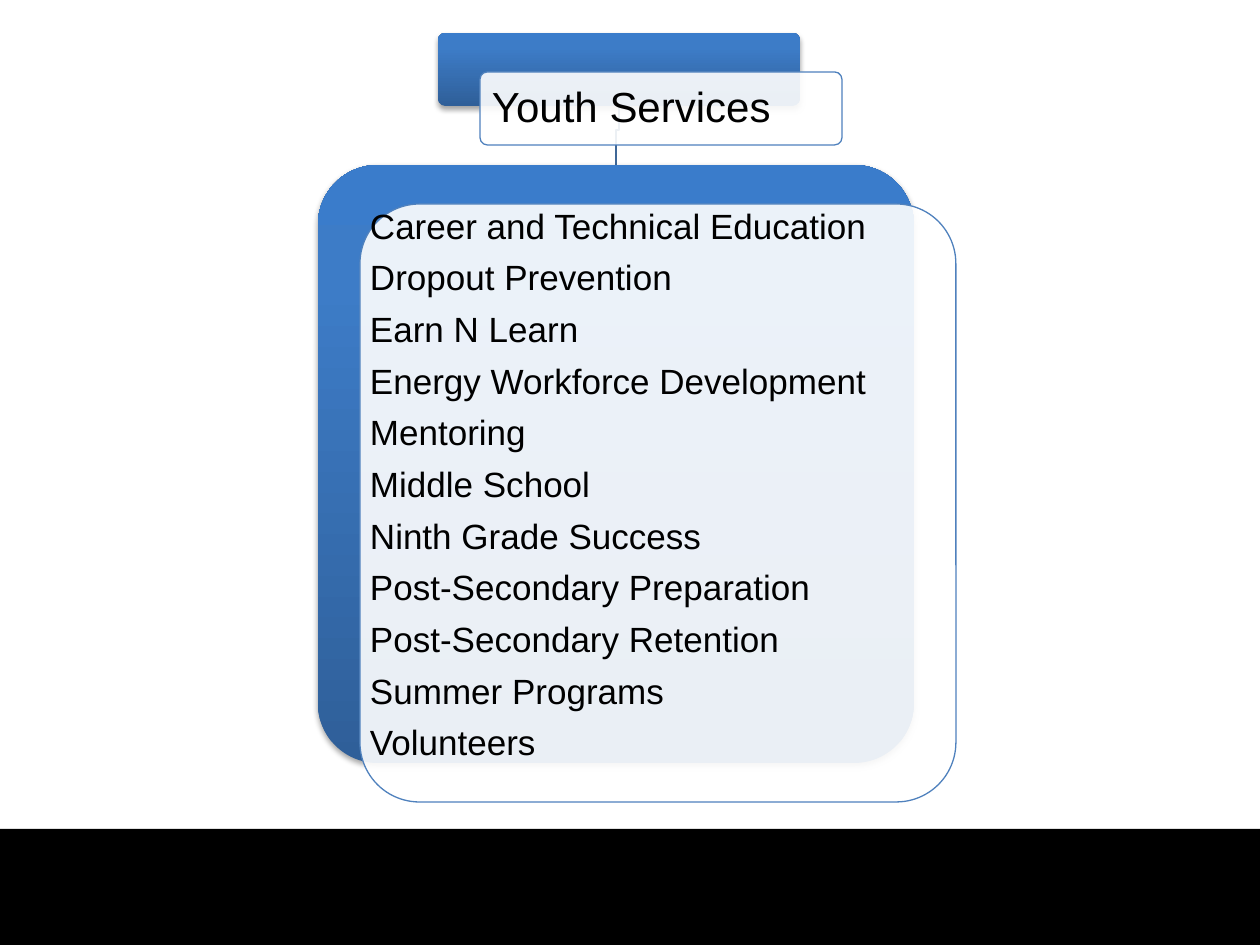
from copy import deepcopy
from dataclasses import dataclass

from pptx import Presentation
from pptx.dml.color import RGBColor
from pptx.enum.shapes import MSO_SHAPE
from pptx.enum.text import MSO_ANCHOR
from pptx.oxml import parse_xml
from pptx.oxml.ns import nsdecls, qn
from pptx.shapes.autoshape import Shape
from pptx.slide import Slide
from pptx.util import Emu, Pt

PX = 914400 // 126
OFFSET_X, OFFSET_Y = 42, 39
COLORS = {
    "paper": "FFFFFF",
    "ink": "000000",
    "border": "4F81BD",
    "link": "3F6797",
    "deep": "2F5F99",
    "mid": "3D7CC7",
    "bright": "3A7CCB",
}
GRADIENT = [(0, "deep"), (0.8, "mid"), (1, "bright")]
PROGRAMS = [
    "Career and Technical Education",
    "Dropout Prevention",
    "Earn N Learn",
    "Energy Workforce Development",
    "Mentoring",
    "Middle School",
    "Ninth Grade Success",
    "Post-Secondary Preparation",
    "Post-Secondary Retention",
    "Summer Programs",
    "Volunteers",
]


@dataclass(frozen=True)
class Card:
    left: int
    top: int
    width: int
    height: int
    lines: list[str]
    size: int
    anchor: MSO_ANCHOR
    inset_x: int
    inset_y: int


CARDS = [
    Card(438, 33, 362, 73, ["Youth Services"], 24, MSO_ANCHOR.MIDDLE, 12, 12),
    Card(318, 165, 596, 598, PROGRAMS, 20, MSO_ANCHOR.TOP, 10, 5),
]


def px(length: int) -> Emu:
    return Emu(length * PX)


def color(key: str) -> RGBColor:
    return RGBColor.from_string(COLORS[key])


def add_block(slide: Slide, kind: MSO_SHAPE, *box: int) -> Shape:
    block = slide.shapes.add_shape(kind, *map(px, box))
    block.shadow.inherit = False
    block.line.fill.background()
    return block


def add_gradient(block: Shape) -> None:
    block.fill.gradient()
    block.fill.gradient_angle = 90
    stop_list = block.fill._xPr.find(qn("a:gradFill")).find(qn("a:gsLst"))
    stop_list.append(deepcopy(stop_list[-1]))
    for stop, (position, key) in zip(block.fill.gradient_stops, GRADIENT):
        stop.position = position
        stop.color.rgb = color(key)


def add_shadow(block: Shape) -> None:
    effects = block._element.spPr.find(qn("a:effectLst"))
    effects.append(parse_xml(
        f'<a:outerShdw {nsdecls("a")} blurRad="{Pt(3.1)}" dist="{Pt(1.8)}" '
        f'dir="5400000" rotWithShape="0"><a:srgbClr val="{COLORS["ink"]}">'
        '<a:alpha val="35000"/></a:srgbClr></a:outerShdw>'
    ))


def add_text(slide: Slide, card: Card, *box: int) -> None:
    frame = slide.shapes.add_textbox(*map(px, box)).text_frame
    frame.word_wrap = True
    frame.vertical_anchor = card.anchor
    frame.margin_left = frame.margin_right = px(card.inset_x)
    frame.margin_top = frame.margin_bottom = px(card.inset_y)
    for index, line in enumerate(card.lines):
        paragraph = frame.add_paragraph() if index else frame.paragraphs[0]
        paragraph.line_spacing = 0.9
        if line != card.lines[-1]:
            paragraph.space_after = Pt(7.9)
        run = paragraph.add_run()
        run.text = line
        run.font.name = "Arial"
        run.font.size = Pt(card.size)
        run.font.color.rgb = color("ink")


def add_card(slide: Slide, card: Card) -> None:
    size = (card.width, card.height)
    back = add_block(slide, MSO_SHAPE.ROUNDED_RECTANGLE, card.left, card.top, *size)
    back.adjustments[0] = 0.1
    add_gradient(back)
    add_shadow(back)

    front_box = (card.left + OFFSET_X, card.top + OFFSET_Y, *size)
    front = add_block(slide, MSO_SHAPE.ROUNDED_RECTANGLE, *front_box)
    front.adjustments[0] = 0.1
    front.fill.solid()
    front.fill.fore_color.rgb = color("paper")
    tint = front._element.spPr.find(qn("a:solidFill"))[0]
    tint.append(parse_xml(f'<a:alpha {nsdecls("a")} val="90000"/>'))
    front.line.color.rgb = color("border")
    front.line.width = Pt(0.75)
    add_text(slide, card, *front_box)


def add_link(slide: Slide, parent: Card, child: Card) -> None:
    start_x = parent.left + parent.width // 2
    start_y = parent.top + parent.height
    end_x = child.left + child.width // 2
    bend_y = start_y + 24
    builder = slide.shapes.build_freeform(start_x, start_y, scale=PX)
    builder.add_line_segments(
        [(start_x, bend_y), (end_x, bend_y), (end_x, child.top)], close=False
    )
    link = builder.convert_to_shape()
    link.shadow.inherit = False
    link.fill.background()
    link.line.color.rgb = color("link")
    link.line.width = Pt(0.75)


def main() -> None:
    """Build the Youth Services hierarchy slide."""
    deck = Presentation()
    deck.slide_width, deck.slide_height = px(1260), px(945)
    slide = deck.slides.add_slide(deck.slide_layouts[6])
    footer = add_block(slide, MSO_SHAPE.RECTANGLE, 0, 829, 1260, 116)
    footer.fill.solid()
    footer.fill.fore_color.rgb = color("ink")
    add_link(slide, *CARDS)
    for card in CARDS:
        add_card(slide, card)
    deck.save("out.pptx")


if __name__ == "__main__":
    main()
